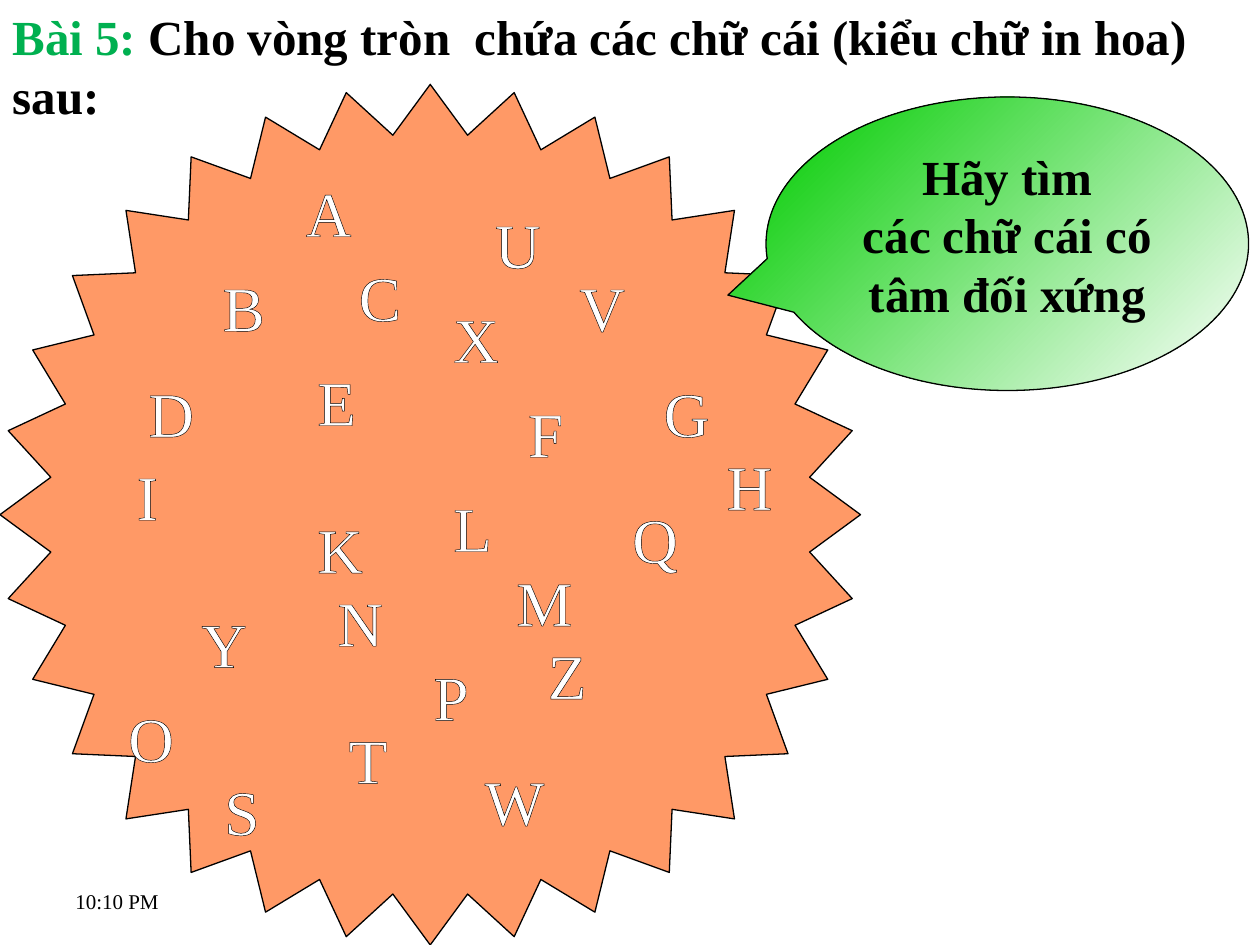
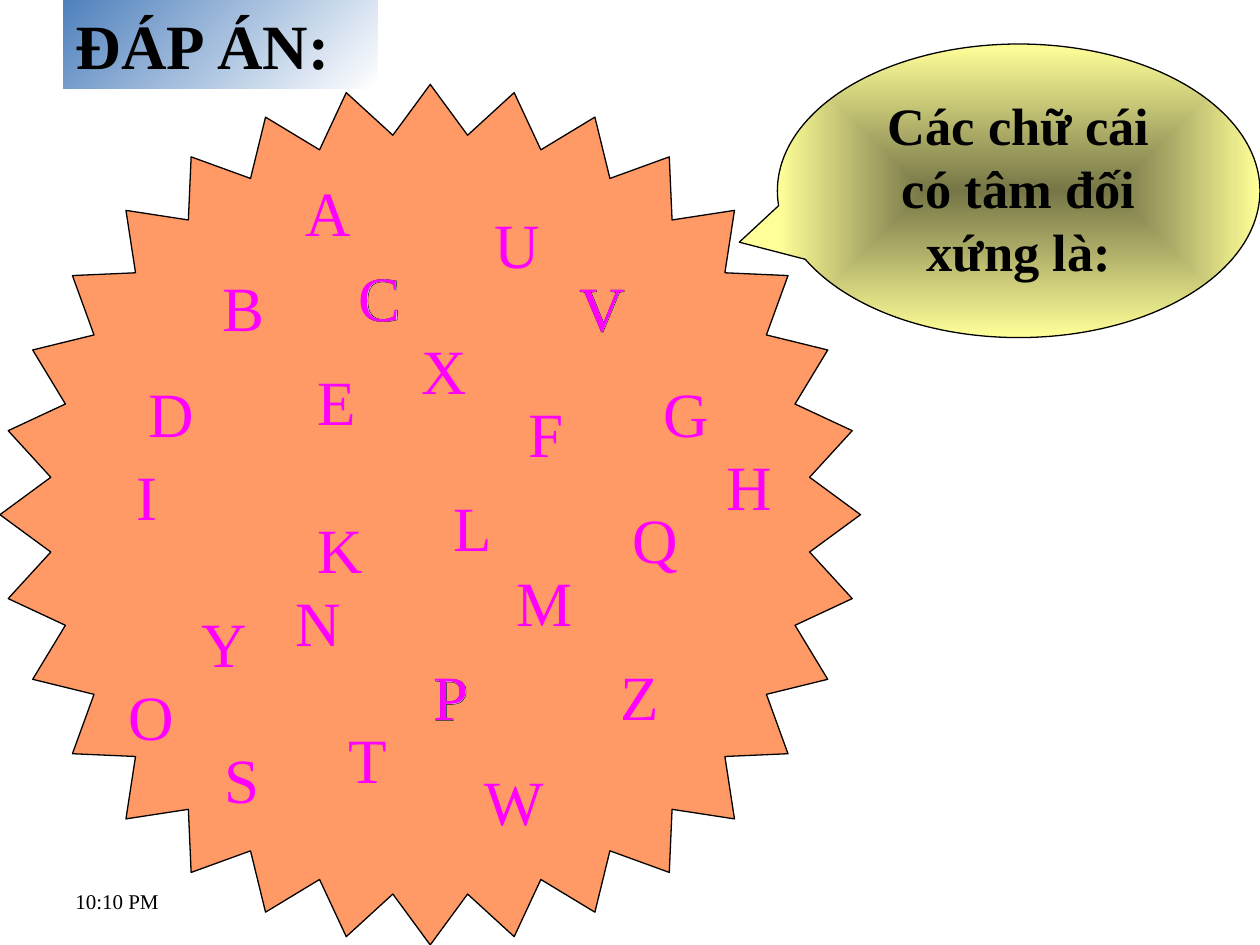
"""Builds two slides on letters that have a centre of symmetry."""
import lxml.etree
import pptx
import pptx.dml.color
import pptx.enum.shapes
import pptx.enum.text
import pptx.oxml.ns
import pptx.util

Inches = pptx.util.Inches
Pt = pptx.util.Pt
SHAPES = pptx.enum.shapes.MSO_SHAPE
ALIGN = pptx.enum.text.PP_ALIGN
ANCHOR = pptx.enum.text.MSO_ANCHOR

FONT = "Times New Roman"
BLACK, WHITE, GREEN, MAGENTA = "000000", "FFFFFF", "00B050", "FF00FF"
ORANGE = "FF9966"
LETTER_SIDE = 0.5
STAR_BOX = (0, 0.67, 6.83, 6.83)
CLOCK_BOX = (0.5, 6.95, 2.33, 0.4)

QUESTION_LETTERS = {
    "A": (2.33, 1.33), "B": (1.67, 2.08), "C": (2.75, 2), "D": (1.08, 2.92),
    "E": (2.42, 2.83), "I": (0.92, 3.58), "F": (4.08, 3.08), "K": (2.42, 4),
    "G": (5.17, 2.92), "L": (3.5, 3.83), "N": (2.58, 4.58), "O": (0.92, 5.5),
    "S": (1.67, 6.08), "H": (5.67, 3.5), "M": (4, 4.42), "Q": (4.92, 3.92),
    "T": (2.67, 5.67), "U": (3.83, 1.58), "P": (3.33, 5.17), "V": (4.5, 2.08),
    "Y": (1.5, 4.75), "X": (3.5, 2.33), "Z": (4.25, 5), "W": (3.75, 6),
}
ANSWER_LETTERS = QUESTION_LETTERS | {
    "N": (2.25, 4.58), "O": (0.92, 5.33), "S": (1.67, 5.83),
    "X": (3.25, 2.58), "Z": (4.83, 5.17),
}
UNDERLAID_LETTERS = {letter: ANSWER_LETTERS[letter] for letter in "CPV"}


def color(value):
    """Return the colour for a hex string."""
    return pptx.dml.color.RGBColor.from_string(value)


def inches(box):
    """Convert a box of numbers to lengths."""
    return [Inches(length) for length in box]


def child(parent, tag, **attributes):
    """Append a drawing element to its parent."""
    return lxml.etree.SubElement(parent, pptx.oxml.ns.qn(tag), **attributes)


def style(paragraph, size, bold=False, align=ALIGN.LEFT):
    """Format one paragraph in the shared font."""
    paragraph.alignment = align
    paragraph.font.name = FONT
    paragraph.font.size = Pt(size)
    paragraph.font.bold = bold


def add_span(paragraph, text, shade=BLACK):
    """Add coloured text to a paragraph."""
    span = paragraph.add_run()
    span.text = text
    span.font.color.rgb = color(shade)
    return span


def fill_gradient(shape, start, end, centred=False):
    """Fill a shape diagonally, or from its centre outwards."""
    shape.fill.gradient()
    for stop, shade in zip(shape.fill.gradient_stops, (start, end)):
        stop.color.rgb = color(shade)
    first, last = shape.fill.gradient_stops
    first.position, last.position = 0, 1
    shape.fill.gradient_angle = 315
    if centred:
        linear = shape._element.spPr.find(".//" + pptx.oxml.ns.qn("a:lin"))
        gradient = linear.getparent()
        gradient.remove(linear)
        route = child(gradient, "a:path", path="rect")
        child(route, "a:fillToRect", l="50000", t="50000", r="50000", b="50000")


def add_outlined_shape(page, kind, box, adjustments):
    """Add a preset shape with a thin black line and no shadow."""
    shape = page.shapes.add_shape(kind, *inches(box))
    shape.shadow.inherit = False
    shape.line.color.rgb = color(BLACK)
    shape.line.width = Pt(0.75)
    for index, value in enumerate(adjustments):
        shape.adjustments[index] = value
    return shape


def add_title(page, box, size, spans):
    """Place the title and write its coloured spans."""
    title = page.shapes.title
    title.left, title.top, title.width, title.height = inches(box)
    frame = title.text_frame
    frame.auto_size = pptx.enum.text.MSO_AUTO_SIZE.NONE
    frame.vertical_anchor = ANCHOR.TOP
    frame.word_wrap = True
    style(frame.paragraphs[0], size, bold=True)
    for text, shade in spans:
        add_span(frame.paragraphs[0], text, shade)
    return title


def add_clock(page, box):
    """Add the time at the foot of the slide."""
    frame = page.shapes.add_textbox(*inches(box)).text_frame
    frame.word_wrap = True
    frame.vertical_anchor = ANCHOR.MIDDLE
    style(frame.paragraphs[0], 12)
    add_span(frame.paragraphs[0], "10:10 PM")


def add_star(page, box):
    """Add the star that holds the letters."""
    star = add_outlined_shape(page, SHAPES.STAR_32_POINT, box, [0.443])
    star.fill.solid()
    star.fill.fore_color.rgb = color(ORANGE)


def add_callout(page, box, size, lines):
    """Add the speech bubble with one paragraph for each line."""
    callout = add_outlined_shape(page, SHAPES.OVAL_CALLOUT, box, [-0.579, 0.175])
    frame = callout.text_frame
    frame.word_wrap = True
    frame.vertical_anchor = ANCHOR.TOP
    for index, line in enumerate(lines):
        paragraph = frame.add_paragraph() if index else frame.paragraphs[0]
        style(paragraph, size, bold=True, align=ALIGN.CENTER)
        add_span(paragraph, line)
    return callout


def add_letters(page, letters, shade):
    """Scatter outlined letters at their positions."""
    for letter, position in letters.items():
        box = page.shapes.add_textbox(*inches((*position, LETTER_SIDE, LETTER_SIDE)))
        box.text_frame.word_wrap = False
        paragraph = box.text_frame.paragraphs[0]
        style(paragraph, 36, align=ALIGN.CENTER)
        properties = add_span(paragraph, letter, shade)._r.get_or_add_rPr()
        outline = child(properties, "a:ln", w=str(Pt(0.75)))
        child(child(outline, "a:solidFill"), "a:srgbClr", val=BLACK)
        properties.insert(0, outline)


def add_page(deck):
    """Add a title-only slide with the shared clock and star."""
    page = deck.slides.add_slide(deck.slide_layouts[5])
    add_clock(page, CLOCK_BOX)
    add_star(page, STAR_BOX)
    return page


def build_question(deck):
    """Build the slide that sets the exercise."""
    page = add_page(deck)
    task = " Cho vòng tròn  chứa các chữ cái (kiểu chữ in hoa) sau:"
    add_title(page, (0, 0, 10, 1.04), 28, [("Bài 5:", GREEN), (task, BLACK)])
    lines = ["Hãy tìm", "các chữ cái có tâm đối xứng"]
    callout = add_callout(page, (6.08, 0.77, 3.83, 2.33), 28, lines)
    fill_gradient(callout, "00CC00", WHITE)
    add_letters(page, QUESTION_LETTERS, WHITE)


def build_answer(deck):
    """Build the slide that shows the answer."""
    page = add_page(deck)
    title = add_title(page, (0.5, 0, 2.5, 0.7), 36, [("ĐÁP ÁN:", BLACK)])
    fill_gradient(title, "4F81BD", WHITE)
    lines = ["Các chữ cái có tâm đối xứng là:"]
    callout = add_callout(page, (6.17, 0.35, 3.83, 2.33), 30, lines)
    fill_gradient(callout, "767647", "FFFF99", centred=True)
    add_letters(page, UNDERLAID_LETTERS, WHITE)
    add_letters(page, ANSWER_LETTERS, MAGENTA)


def main():
    """Build and save the deck."""
    deck = pptx.Presentation()
    deck.slide_width, deck.slide_height = Inches(10), Inches(7.5)
    build_question(deck)
    build_answer(deck)
    deck.save("out.pptx")


if __name__ == "__main__":
    main()
